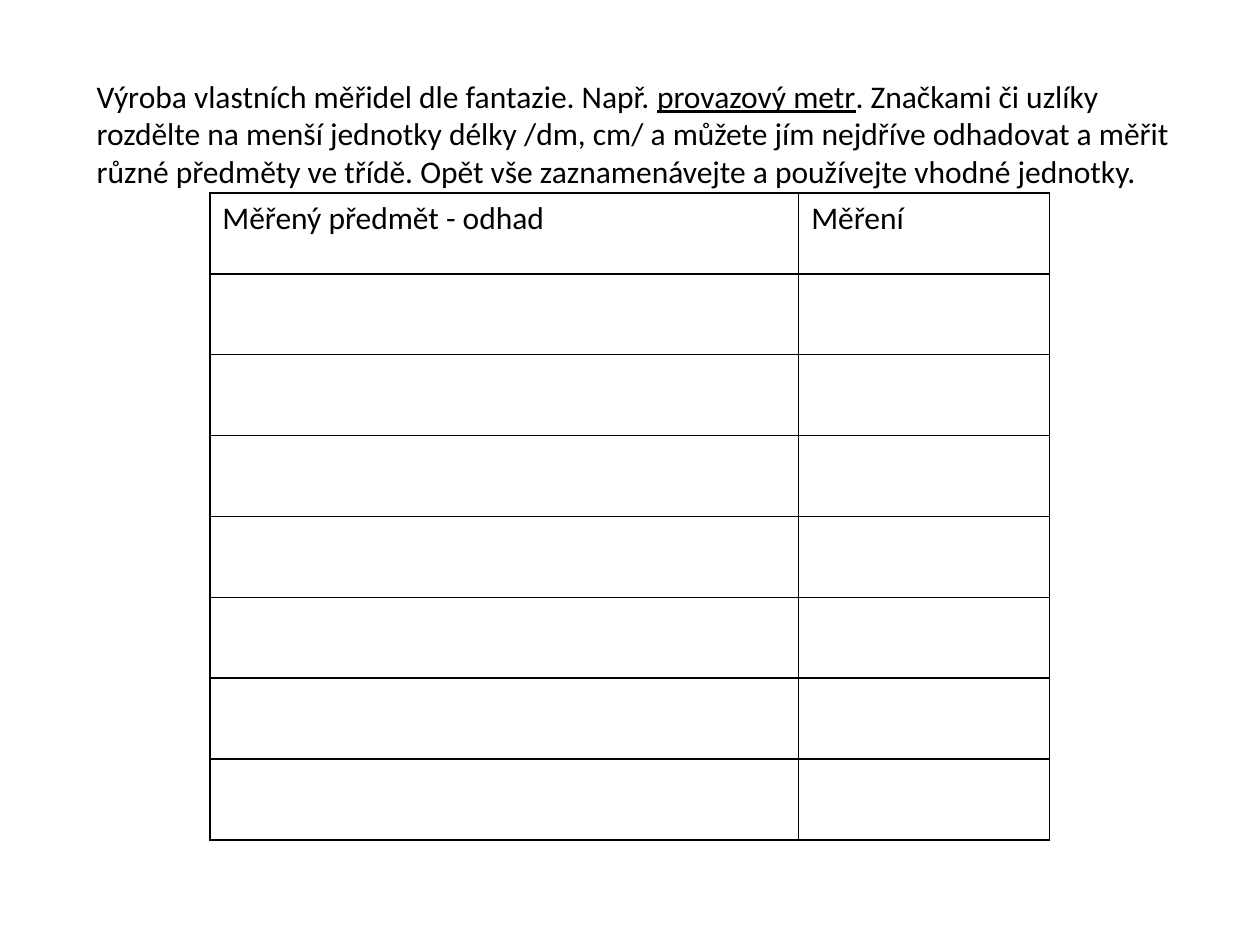
from lxml import etree
from pptx import Presentation
from pptx.dml.color import RGBColor
from pptx.oxml.ns import qn
from pptx.util import Cm, Pt

BLACK = RGBColor(0, 0, 0)
FONT = "Calibri"
FONT_SIZE = Pt(18)
BORDER_WIDTH = Pt(1)


def add_run(paragraph, text, underline=False):
    run = paragraph.add_run()
    run.text = text
    run.font.name = FONT
    run.font.size = FONT_SIZE
    run.font.color.rgb = BLACK
    run.font.underline = underline


def add_borders(cell):
    properties = cell._tc.get_or_add_tcPr()
    for position, side in enumerate(("a:lnL", "a:lnR", "a:lnT", "a:lnB")):
        line = etree.Element(qn(side), w=str(BORDER_WIDTH))
        fill = etree.SubElement(line, qn("a:solidFill"))
        etree.SubElement(fill, qn("a:srgbClr"), val=str(BLACK))
        properties.insert(position, line)


prs = Presentation()
prs.slide_width, prs.slide_height = Cm(25.4), Cm(19.05)
slide = prs.slides.add_slide(prs.slide_layouts[6])

# Instructions: each line is a list of (text, underlined) runs
INSTRUCTIONS = [
    [("Výroba vlastních měřidel dle fantazie. Např. ", False),
     ("provazový metr", True),
     (". Značkami či uzlíky", False)],
    [("rozdělte na menší jednotky délky /dm, cm/ a můžete jím nejdříve odhadovat a měřit", False)],
    [("různé předměty ve třídě. Opět vše zaznamenávejte a používejte vhodné jednotky.", False)],
]
instructions = slide.shapes.add_textbox(Cm(1.7), Cm(1.42), Cm(22.68), Cm(4.11)).text_frame
instructions.word_wrap = True
for number, line_runs in enumerate(INSTRUCTIONS):
    paragraph = instructions.add_paragraph() if number else instructions.paragraphs[0]
    for text, underlined in line_runs:
        add_run(paragraph, text, underlined)

# Record sheet: a heading row and empty rows to fill in
HEADINGS = ["Měřený předmět - odhad", "Měření"]
COLUMN_WIDTHS = [Cm(11.87), Cm(5.06)]
ROW_COUNT = 8
ROW_HEIGHT = Cm(1.63)
record_sheet = slide.shapes.add_table(
    ROW_COUNT, len(HEADINGS), Cm(4.23), Cm(3.89),
    sum(COLUMN_WIDTHS), ROW_COUNT * ROW_HEIGHT).table
record_sheet.first_row = False
record_sheet.horz_banding = False
for column, width in zip(record_sheet.columns, COLUMN_WIDTHS):
    column.width = width
for row in record_sheet.rows:
    row.height = ROW_HEIGHT
for cell in record_sheet.iter_cells():
    cell.fill.background()
    add_borders(cell)
for cell, heading in zip(record_sheet.rows[0].cells, HEADINGS):
    add_run(cell.text_frame.paragraphs[0], heading)

prs.save("out.pptx")
